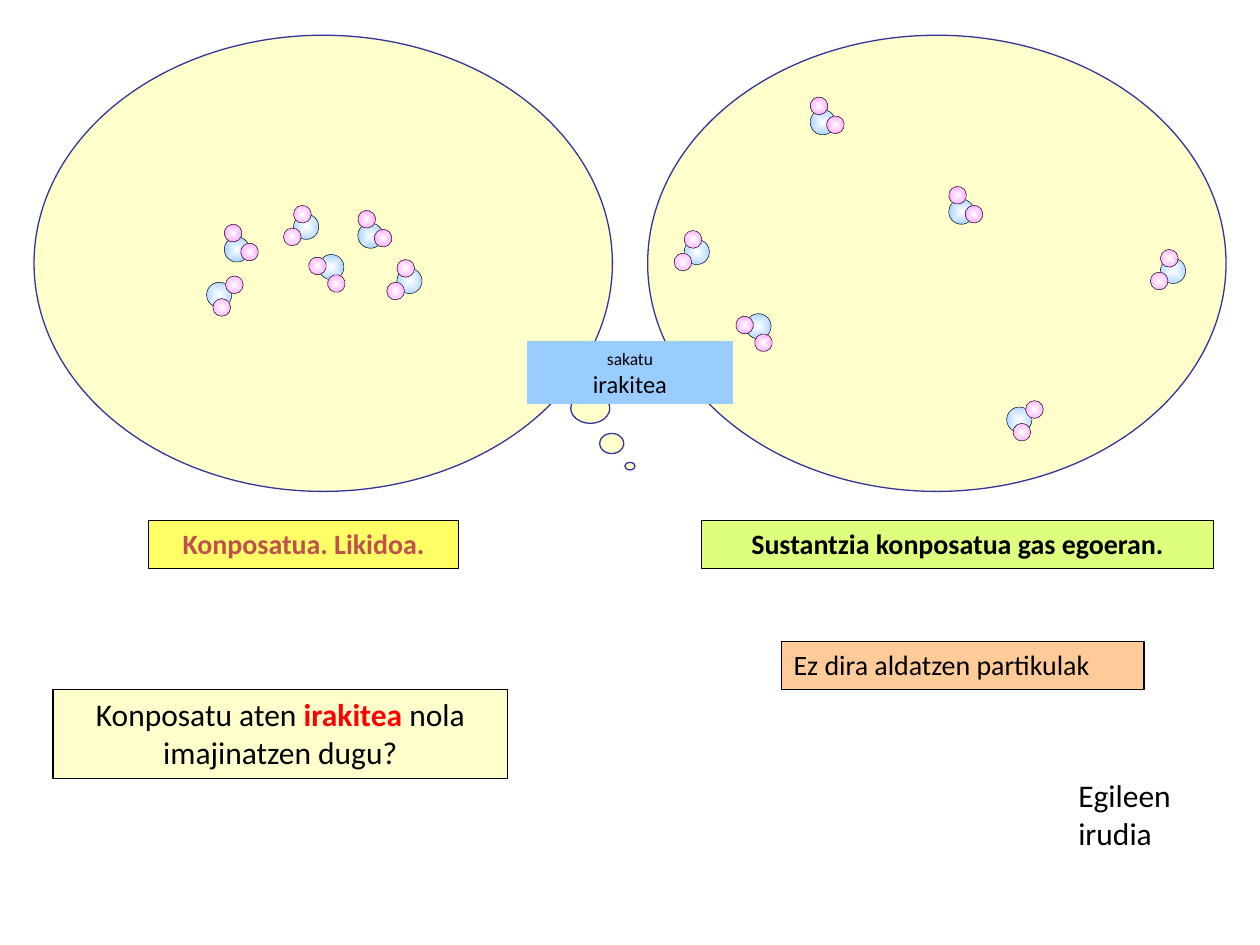
from dataclasses import dataclass
from typing import NamedTuple

from lxml.etree import SubElement
from pptx import Presentation
from pptx.dml.color import RGBColor
from pptx.enum.shapes import MSO_SHAPE as Preset
from pptx.enum.text import MSO_ANCHOR as Anchor, PP_ALIGN as Align
from pptx.oxml.ns import qn
from pptx.util import Emu, Pt

EMU_PER_PX = 9144  # 100 px to the inch
FONT = "Calibri"

WHITE = RGBColor(0xFF, 0xFF, 0xFF)
BLACK = RGBColor(0x00, 0x00, 0x00)
RED = RGBColor(0xFF, 0x00, 0x00)
BRICK = RGBColor(0xC0, 0x50, 0x4D)
CREAM = RGBColor(0xFF, 0xFF, 0xCC)
NAVY = RGBColor(0x33, 0x33, 0x99)
SKY = RGBColor(0x99, 0xCC, 0xFF)
PINK = RGBColor(0xFF, 0x99, 0xFF)
PEACH = RGBColor(0xFF, 0xCC, 0x99)
YELLOW = RGBColor(0xFF, 0xFF, 0x66)
LIME = RGBColor(0xDD, 0xFF, 0x7D)


class Rect(NamedTuple):
    left: int
    top: int
    width: int
    height: int


@dataclass(frozen=True)
class Pose:
    """Molecule orientation: angle and small-atom offsets from the large atom."""
    angle: float
    offsets: tuple[tuple[int, int], ...]


@dataclass(frozen=True)
class Molecule:
    left: int
    top: int
    pose: Pose


@dataclass(frozen=True)
class Span:
    text: str
    size: int
    color: RGBColor = BLACK
    bold: bool = False


@dataclass(frozen=True)
class Label:
    rect: Rect
    fill: RGBColor
    spans: tuple[Span, ...]
    align: Align = Align.CENTER


LARGE_ATOM, SMALL_ATOM = 20, 14
FACING_LEFT = Pose(55.5, ((-8, 11), (0, -7)))
FACING_UP = Pose(170.6, ((0, -10), (13, 5)))
FACING_RIGHT = Pose(238.8, ((15, -5), (5, 13)))
FACING_DOWN = Pose(344.4, ((7, 16), (-8, 2)))

GAS_BUBBLE = Rect(514, 28, 459, 362)
LIQUID_CLOUD = (
    Rect(27, 28, 459, 362),
    Rect(453, 312, 31, 24),
    Rect(496, 367, 8, 6),
    Rect(476, 344, 19, 16),
)
MOLECULES = (
    # Liquid: close together
    Molecule(315, 213, FACING_LEFT),
    Molecule(178, 188, FACING_UP),
    Molecule(164, 224, FACING_RIGHT),
    Molecule(284, 177, FACING_UP),
    Molecule(253, 202, FACING_DOWN),
    Molecule(233, 170, FACING_LEFT),
    # Gas: far apart
    Molecule(921, 205, FACING_LEFT),
    Molecule(753, 158, FACING_UP),
    Molecule(543, 190, FACING_LEFT),
    Molecule(643, 87, FACING_UP),
    Molecule(799, 323, FACING_RIGHT),
    Molecule(592, 249, FACING_DOWN),
)
LABELS = (
    Label(Rect(620, 509, 288, 38), PEACH,
          (Span("Ez dira aldatzen partikulak", 16),), Align.LEFT),
    Label(Rect(118, 413, 246, 38), YELLOW,
          (Span("Konposatua. Likidoa.", 16, BRICK, True),)),
    Label(Rect(557, 413, 406, 38), LIME,
          (Span("Sustantzia konposatua gas egoeran.", 16, bold=True),)),
    Label(Rect(42, 547, 361, 71), CREAM,
          (Span("Konposatu aten ", 18), Span("irakitea", 18, RED, True),
           Span(" nola imajinatzen dugu?", 18))),
)


def px(value: int) -> Emu:
    return Emu(value * EMU_PER_PX)


def place(rect: Rect) -> list[Emu]:
    return [px(value) for value in rect]


def add_shape(shapes, preset: Preset, rect: Rect, *, fill: RGBColor | None = None,
              line: RGBColor | None = None, weight: float = 0.75):
    shape = shapes.add_shape(preset, *place(rect))
    shape.shadow.inherit = False
    if fill is not None:
        shape.fill.solid()
        shape.fill.fore_color.rgb = fill
    if line is None:
        shape.line.fill.background()
    else:
        shape.line.color.rgb = line
        shape.line.width = Pt(weight)
    return shape


def add_atom(shapes, left: int, top: int, size: int, color: RGBColor, angle: float) -> None:
    atom = add_shape(shapes, Preset.OVAL, Rect(left, top, size, size),
                     line=BLACK, weight=0.25)
    atom.rotation = angle
    atom.fill.gradient()
    for stop, shade, position in zip(atom.fill.gradient_stops, (WHITE, color), (0, 1)):
        stop.color.rgb = shade
        stop.position = position
    # Radiate from the centre rather than along a line
    gradient = atom._element.spPr.find(qn("a:gradFill"))
    gradient.remove(gradient.find(qn("a:lin")))
    radial = SubElement(gradient, qn("a:path"), {"path": "shape"})
    SubElement(radial, qn("a:fillToRect"), {side: "50000" for side in "ltrb"})


def add_molecule(page, molecule: Molecule) -> None:
    atoms = page.shapes.add_group_shape().shapes
    pose = molecule.pose
    add_atom(atoms, molecule.left, molecule.top, LARGE_ATOM, SKY, pose.angle)
    for right, down in pose.offsets:
        add_atom(atoms, molecule.left + right, molecule.top + down,
                 SMALL_ATOM, PINK, pose.angle)


def write_text(box, paragraphs: tuple[tuple[Span, ...], ...], *,
               align: Align = Align.CENTER, anchor: Anchor = Anchor.TOP) -> None:
    frame = box.text_frame
    frame.word_wrap = True
    frame.vertical_anchor = anchor
    for index, spans in enumerate(paragraphs):
        para = frame.add_paragraph() if index else frame.paragraphs[0]
        para.alignment = align
        for span in spans:
            run = para.add_run()
            run.text = span.text
            run.font.name = FONT
            run.font.size = Pt(span.size)
            run.font.bold = span.bold
            run.font.color.rgb = span.color


def main() -> None:
    deck = Presentation()
    deck.slide_width, deck.slide_height = px(1000), px(750)
    page = deck.slides.add_slide(deck.slide_layouts[6])

    # Bubbles
    add_shape(page.shapes, Preset.OVAL, GAS_BUBBLE, fill=CREAM, line=NAVY)
    cloud = page.shapes.add_group_shape()
    for rect in LIQUID_CLOUD:
        add_shape(cloud.shapes, Preset.OVAL, rect, fill=CREAM, line=NAVY)

    # Particles
    for molecule in MOLECULES:
        add_molecule(page, molecule)

    # Boiling button
    button = add_shape(page.shapes, Preset.ACTION_BUTTON_CUSTOM,
                       Rect(418, 271, 164, 50), fill=SKY)
    write_text(button, ((Span("sakatu", 10),), (Span("irakitea", 14),)),
               anchor=Anchor.MIDDLE)

    # Labels
    for label in LABELS:
        box = add_shape(page.shapes, Preset.RECTANGLE, label.rect,
                        fill=label.fill, line=BLACK)
        write_text(box, (label.spans,), align=label.align)

    # Credit
    credit = page.shapes.add_textbox(*place(Rect(846, 611, 154, 71)))
    write_text(credit, ((Span("Egileen irudia", 18),),), align=Align.LEFT)

    deck.save("out.pptx")


if __name__ == "__main__":
    main()
